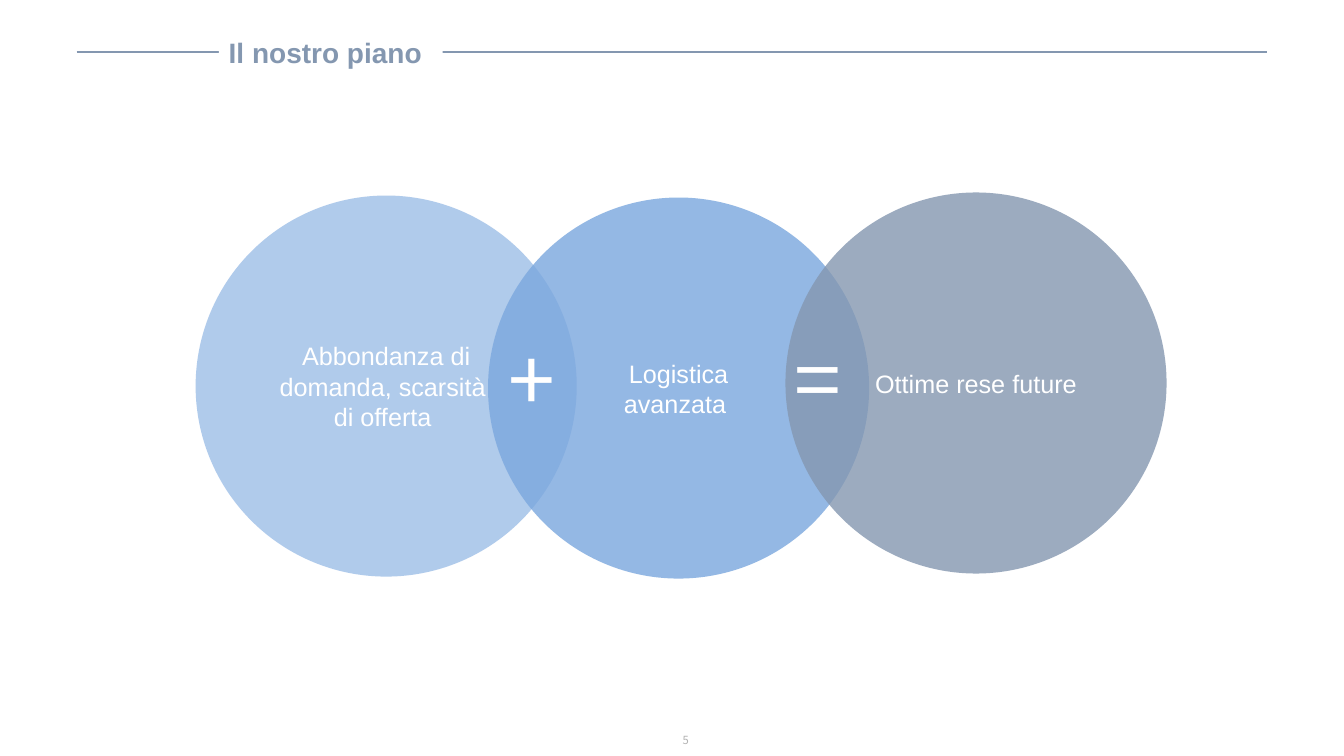
import pptx
import pptx.util
import pptx.dml.color
import pptx.enum.shapes
import pptx.enum.text
import pptx.oxml
import pptx.oxml.ns
from pptx.util import Inches

COLORS = {
    "white": "FFFFFF",
    "light_blue": "9DBEE7",
    "blue": "7CA8DE",
    "slate": "8497B0",
    "grey": "B2B2B2",
}
SANS = "Arial"
SYMBOLS = "Noto Sans CJK KR"
ALIGN = pptx.enum.text.PP_ALIGN
ANCHOR = pptx.enum.text.MSO_ANCHOR
SHAPES = pptx.enum.shapes.MSO_SHAPE
DIAMETER = 3.78


def rgb(name):
    return pptx.dml.color.RGBColor.from_string(COLORS[name])


def write(shape, lines, size, font, color, align=ALIGN.LEFT, anchor=ANCHOR.TOP, bold=False, wrap=True):
    frame = shape.text_frame
    frame.word_wrap = wrap
    frame.vertical_anchor = anchor
    for index, line in enumerate(lines):
        para = frame.paragraphs[0] if index == 0 else frame.add_paragraph()
        para.alignment = align
        span = para.add_run()
        span.text = line
        span.font.size = pptx.util.Pt(size)
        span.font.name = font
        span.font.bold = bold
        span.font.color.rgb = rgb(color)


def add_filled(page, kind, left, top, width, height, color):
    shape = page.shapes.add_shape(kind, Inches(left), Inches(top), Inches(width), Inches(height))
    shape.shadow.inherit = False
    shape.fill.solid()
    shape.fill.fore_color.rgb = rgb(color)
    shape.line.fill.background()
    return shape


def add_circle(page, left, top, color, opacity, lines):
    circle = add_filled(page, SHAPES.OVAL, left, top, DIAMETER, DIAMETER, color)
    tint = circle.fill._xPr.find(".//" + pptx.oxml.ns.qn("a:srgbClr"))
    alpha = tint.makeelement(pptx.oxml.ns.qn("a:alpha"), {"val": str(opacity * 1000)})
    tint.append(alpha)
    write(circle, lines, 18, SANS, "white", ALIGN.CENTER, ANCHOR.MIDDLE)


def add_label(page, left, top, width, height, text, size, color, **layout):
    box = page.shapes.add_textbox(Inches(left), Inches(top), Inches(width), Inches(height))
    write(box, [text], size, SYMBOLS, color, **layout)


def add_rule(page, left, right, top):
    rule = page.shapes.add_connector(
        pptx.enum.shapes.MSO_CONNECTOR.STRAIGHT, Inches(left), Inches(top), Inches(right), Inches(top))
    rule.line.color.rgb = rgb("slate")
    rule.line.width = pptx.util.Pt(1.5)
    properties = rule.line._get_or_add_ln().getparent()
    properties.append(properties.makeelement(pptx.oxml.ns.qn("a:effectLst"), {}))


def add_title(page, text):
    title = add_filled(page, SHAPES.RECTANGLE, 2.17, 0.3, 2.22, 0.46, "white")
    write(title, [text], 20, SANS, "slate", bold=True)


def main():
    deck = pptx.Presentation()
    deck.slide_width = Inches(13.33)
    deck.slide_height = Inches(7.5)
    page = deck.slides.add_slide(deck.slide_layouts[6])

    add_rule(page, 0.76, 12.57, 0.52)
    circles = [
        (1.94, 1.94, "light_blue", 80, ["Abbondanza di domanda, scarsità ", "di offerta "]),
        (4.84, 1.96, "blue", 81, [" Logistica ", "avanzata "]),
        (7.79, 1.91, "slate", 80, ["Ottime rese future"]),
    ]
    for circle in circles:
        add_circle(page, *circle)
    add_label(page, 6.41, 7.14, 0.52, 0.4, "5", 8, "grey", align=ALIGN.RIGHT, anchor=ANCHOR.MIDDLE)
    add_title(page, "Il nostro piano")
    for left, symbol in [(4.94, "+"), (7.78, "=")]:
        add_label(page, left, 3.2, 0.61, 1.1, symbol, 60, "white", wrap=False)

    deck.save("out.pptx")


if __name__ == "__main__":
    main()
